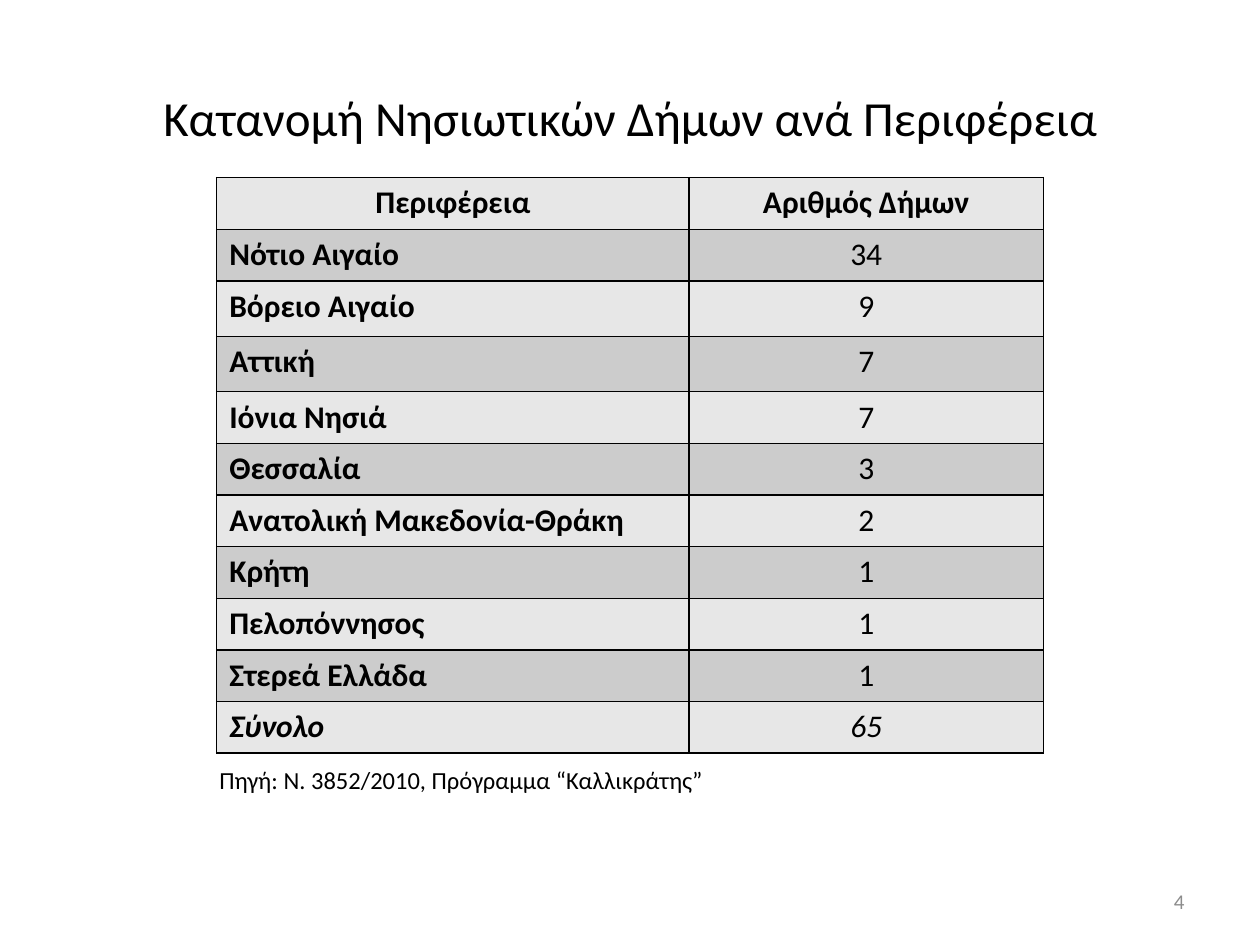
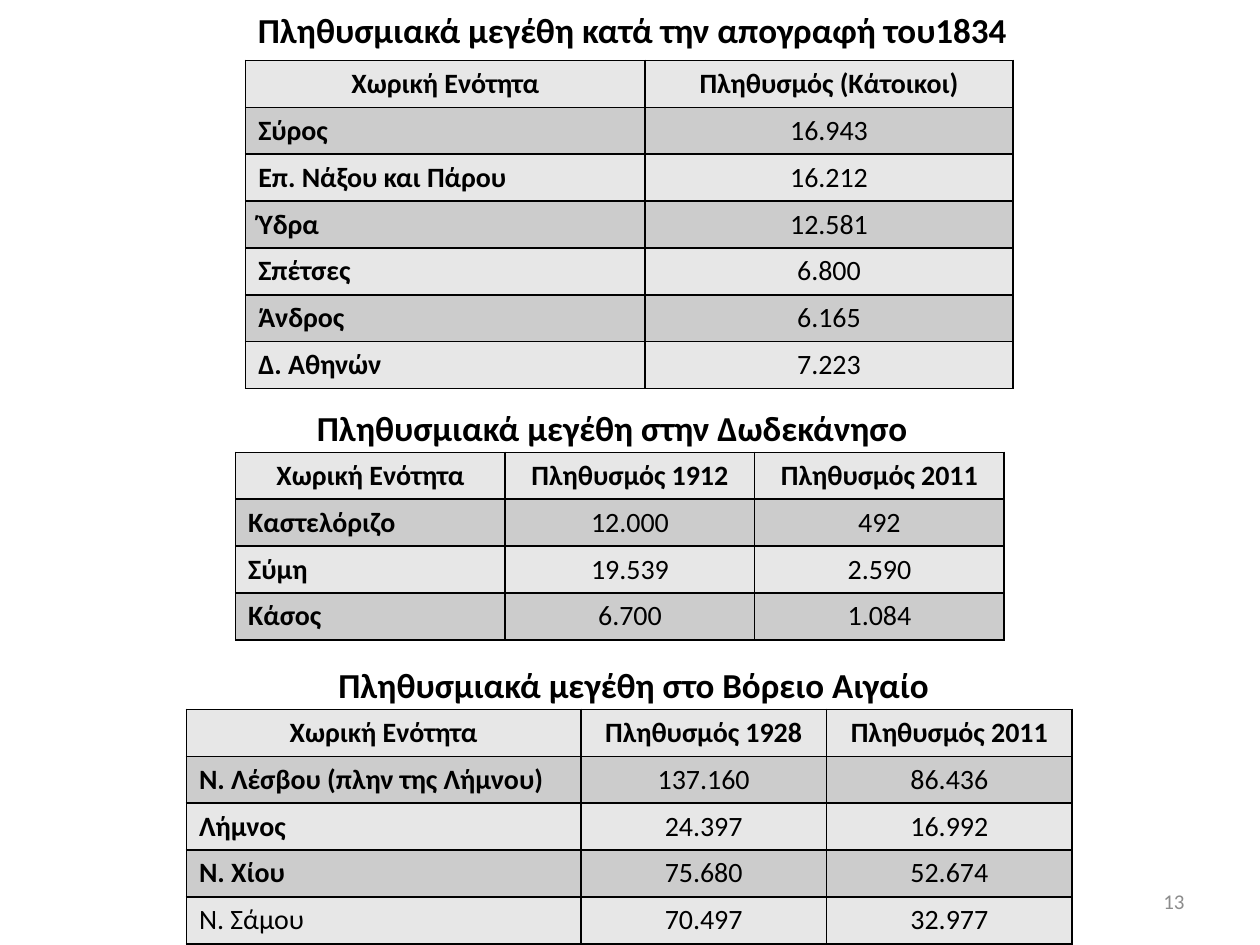
"""Build two slides of island municipality and population tables."""
from dataclasses import dataclass

from lxml.etree import SubElement as Sub
from pptx import Presentation
from pptx.dml.color import RGBColor as Rgb
from pptx.enum.text import MSO_ANCHOR as Anchor, MSO_AUTO_SIZE as Fit, PP_ALIGN as Align
from pptx.oxml.ns import qn
from pptx.util import Emu, Pt

PX = 9144


@dataclass(frozen=True)
class Theme:
    font: str = "Calibri"
    ink: str = "000000"
    mute: str = "8C8C8C"
    bands: tuple = ("E7E7E7", "CCCCCC")
    title: int = 28
    head: int = 20
    large: int = 18
    cell: int = 16
    note: int = 14
    foot: int = 12
    rule: int = 1


def px(*vals):
    return [Emu(val * PX) for val in vals]


class Deck:
    def __init__(self, theme):
        self.theme = theme
        self.prs = Presentation()
        self.prs.slide_width, self.prs.slide_height = px(1000, 750)
        self.slide = None

    def start(self, layout):
        self.slide = self.prs.slides.add_slide(self.prs.slide_layouts.get_by_name(layout))

    def words(self, frame, text, size, align, bold=False, slant=False, color=None):
        frame.text = text
        para = frame.paragraphs[0]
        para.alignment = align
        font = para.runs[0].font
        font.name, font.size = self.theme.font, Pt(size)
        font.bold, font.italic = bold, slant
        font.color.rgb = Rgb.from_string(color or self.theme.ink)
        return para

    def place(self, shape, box, anchor):
        shape.left, shape.top, shape.width, shape.height = px(*box)
        frame = shape.text_frame
        frame.word_wrap, frame.auto_size = True, Fit.NONE
        frame.vertical_anchor = anchor
        return frame

    def title(self, text, box, size, bold=False):
        frame = self.place(self.slide.shapes.title, box, Anchor.MIDDLE)
        self.words(frame, text, size, Align.CENTER, bold)

    def body(self, text, box):
        frame = self.place(self.slide.placeholders[1], box, Anchor.TOP)
        para = self.words(frame, text, self.theme.note, Align.LEFT)
        props = para._p.get_or_add_pPr()
        props.set("marL", "0")
        props.set("indent", "0")
        Sub(props, qn("a:buNone"))

    def label(self, text, box, size, align=Align.CENTER, bold=True, color=None):
        shape = self.slide.shapes.add_textbox(*px(*box))
        frame = self.place(shape, box, Anchor.MIDDLE)
        self.words(frame, text, size, align, bold, color=color)

    def number(self, num):
        self.label(str(num), (717, 695, 233, 40), self.theme.foot, Align.RIGHT, False,
                   self.theme.mute)

    def border(self, cell):
        props = cell._tc.get_or_add_tcPr()
        for spot, side in enumerate(("lnL", "lnR", "lnT", "lnB")):
            line = props.makeelement(qn(f"a:{side}"), {"w": str(Pt(self.theme.rule))})
            fill = Sub(line, qn("a:solidFill"))
            Sub(fill, qn("a:srgbClr"), val=self.theme.ink)
            props.insert(spot, line)

    def table(self, rows, at, cols, high, size, tall=(), total=False, plain=()):
        highs = [high + 3 if row in tall else high for row in range(len(rows))]
        frame = self.slide.shapes.add_table(
            len(rows), len(cols), *px(*at, sum(cols), sum(highs)))
        grid = frame.table
        grid.first_row = grid.horz_banding = False
        for col, wide in zip(grid.columns, px(*cols)):
            col.width = wide
        for row, tip in zip(grid.rows, px(*highs)):
            row.height = tip
        for r, row in enumerate(rows):
            for c, text in enumerate(row):
                cell = grid.cell(r, c)
                cell.fill.solid()
                cell.fill.fore_color.rgb = Rgb.from_string(self.theme.bands[r % 2])
                align = Align.LEFT if r and not c else Align.CENTER
                bold = r == 0 or (c == 0 and r not in plain)
                slant = total and r == len(rows) - 1
                self.words(cell.text_frame, text, size, align, bold, slant)
                self.border(cell)


REGIONS = [
    ("Περιφέρεια", "Αριθμός Δήμων"),
    ("Νότιο Αιγαίο", "34"),
    ("Βόρειο Αιγαίο", "9"),
    ("Αττική", "7"),
    ("Ιόνια Νησιά", "7"),
    ("Θεσσαλία", "3"),
    ("Ανατολική Μακεδονία-Θράκη", "2"),
    ("Κρήτη", "1"),
    ("Πελοπόννησος", "1"),
    ("Στερεά Ελλάδα", "1"),
    ("Σύνολο", "65"),
]
UNIT = "Χωρική Ενότητα"
CENSUS = [
    (UNIT, "Πληθυσμός (Κάτοικοι)"),
    ("Σύρος", "16.943"),
    ("Επ. Νάξου και Πάρου", "16.212"),
    ("Ύδρα", "12.581"),
    ("Σπέτσες", "6.800"),
    ("Άνδρος", "6.165"),
    ("Δ. Αθηνών", "7.223"),
]
SOUTH = [
    (UNIT, "Πληθυσμός 1912", "Πληθυσμός 2011"),
    ("Καστελόριζο", "12.000", "492"),
    ("Σύμη", "19.539", "2.590"),
    ("Κάσος", "6.700", "1.084"),
]
NORTH = [
    (UNIT, "Πληθυσμός 1928", "Πληθυσμός 2011"),
    ("Ν. Λέσβου (πλην της Λήμνου)", "137.160", "86.436"),
    ("Λήμνος", "24.397", "16.992"),
    ("Ν. Χίου", "75.680", "52.674"),
    ("Ν. Σάμου", "70.497", "32.977"),
]


def main():
    theme = Theme()
    deck = Deck(theme)

    deck.start("Title and Content")
    deck.title("Κατανομή Νησιωτικών Δήμων ανά Περιφέρεια", (50, 30, 900, 125), theme.title)
    deck.body("Πηγή: Ν. 3852/2010, Πρόγραμμα “Καλλικράτης”", (164, 602, 763, 53))
    deck.number(4)
    deck.table(REGIONS, (172, 141), (375, 281), 41, theme.large, tall=(2, 3), total=True)

    deck.start("Title Only")
    deck.title("Πληθυσμιακά μεγέθη κατά την απογραφή του1834", (78, 0, 848, 47),
               theme.head, True)
    deck.number(13)
    deck.table(CENSUS, (195, 48), (317, 292), 37, theme.cell)
    deck.label("Πληθυσμιακά μεγέθη στην Δωδεκάνησο", (62, 312, 848, 55), theme.head)
    deck.table(SOUTH, (187, 359), (214, 198, 198), 37, theme.cell)
    deck.label("Πληθυσμιακά μεγέθη στο Βόρειο Αιγαίο", (79, 516, 848, 55), theme.head)
    deck.table(NORTH, (148, 563), (313, 195, 195), 37, theme.cell, plain=(4,))

    deck.prs.save("out.pptx")


if __name__ == "__main__":
    main()
